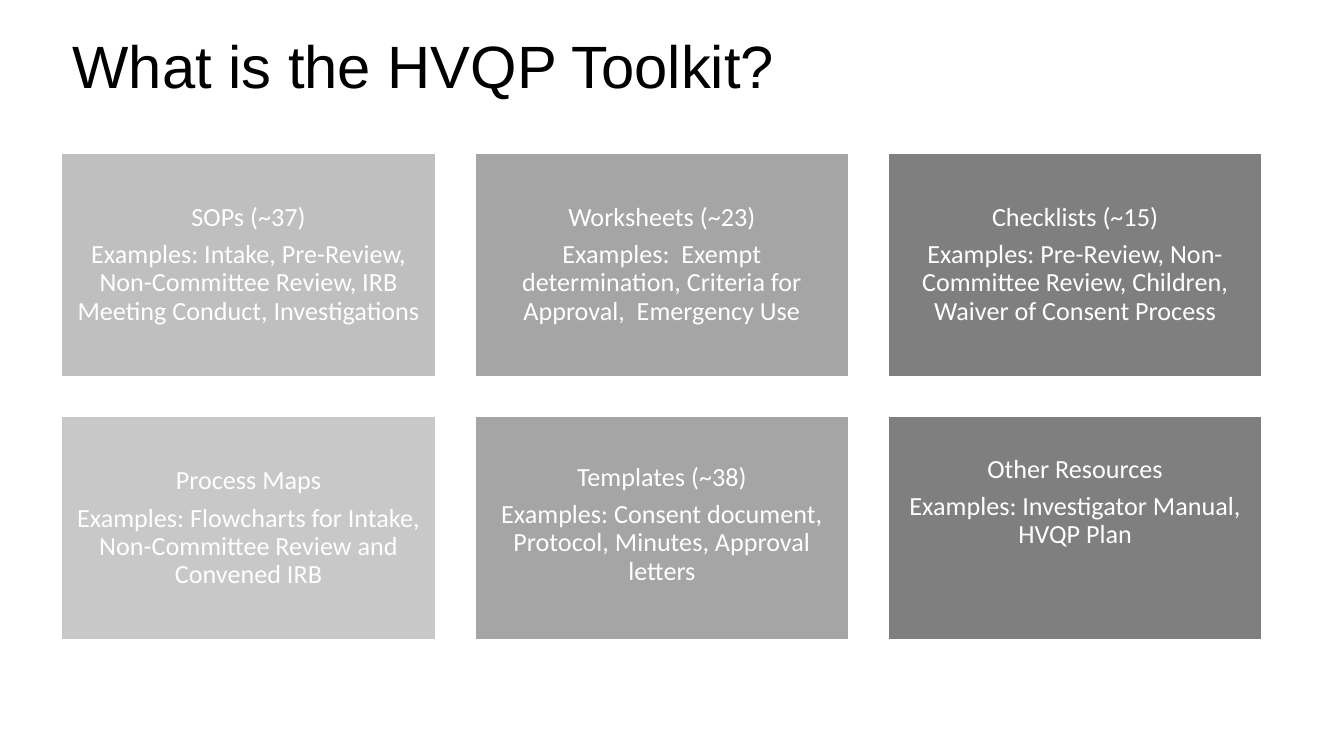
from dataclasses import dataclass

from lxml import etree
from pptx import Presentation
from pptx.dml.color import RGBColor
from pptx.enum.shapes import MSO_SHAPE
from pptx.enum.text import MSO_ANCHOR, MSO_AUTO_SIZE, PP_ALIGN
from pptx.oxml.ns import qn
from pptx.util import Emu, Pt

RECT = MSO_SHAPE.RECTANGLE
MIDDLE = MSO_ANCHOR.MIDDLE
TOP = MSO_ANCHOR.TOP
CENTER = PP_ALIGN.CENTER
LEFT = PP_ALIGN.LEFT
FIXED = MSO_AUTO_SIZE.NONE

SCALE = 4572
COLS = 3
GRID_X, GRID_Y = 90, 226
CARD_W, CARD_H = 560, 336
GAP_X, GAP_Y = 55, 56
PAD = 12


@dataclass(frozen=True)
class Theme:
    ink: str = "000000"
    paper: str = "FFFFFF"
    light: str = "BFBFBF"
    mid: str = "A5A5A5"
    dark: str = "7F7F7F"
    head_font: str = "Arial"
    card_font: str = "Calibri"
    head_size: int = 32
    card_size: int = 14


@dataclass(frozen=True)
class Card:
    name: str
    text: str
    fill: str
    alpha: int = 100
    inset: int = 0


THEME = Theme()

CARDS = [
    Card("SOPs (~37)",
         "Examples: Intake, Pre-Review, Non-Committee Review, "
         "IRB Meeting Conduct, Investigations", THEME.light),
    Card("Worksheets (~23)",
         "Examples:  Exempt determination, Criteria for Approval,  "
         "Emergency Use", THEME.mid),
    Card("Checklists (~15)",
         "Examples: Pre-Review, Non-Committee Review, Children, "
         "Waiver of Consent Process", THEME.dark),
    Card("Process Maps",
         "Examples: Flowcharts for Intake, Non-Committee Review "
         "and Convened IRB", THEME.light, alpha=85),
    Card("Templates (~38)",
         "Examples: Consent document, Protocol, Minutes, "
         "Approval letters", THEME.mid, inset=72),
    Card("Other Resources",
         "Examples: Investigator Manual, HVQP Plan", THEME.dark, inset=60),
]


def px(n):
    return Emu(n * SCALE)


def color(code):
    return RGBColor.from_string(code)


def style(para, font, size, code, align, space):
    para.alignment = align
    para.line_spacing = space
    for run in para.runs:
        run.font.name = font
        run.font.size = Pt(size)
        run.font.color.rgb = color(code)


def set_pad(frame, left, top, right, base):
    frame.margin_left, frame.margin_top = px(left), px(top)
    frame.margin_right, frame.margin_bottom = px(right), px(base)


def set_alpha(shape, value):
    fill = shape.fill._xPr.find(qn("a:solidFill"))
    etree.SubElement(fill[0], qn("a:alpha"), val=str(value * 1000))


def add_title(slide, text):
    title = slide.shapes.title
    title.left, title.top = px(0), px(-24)
    title.width, title.height = px(1800), px(188)
    frame = title.text_frame
    frame.text = text
    frame.word_wrap = True
    frame.auto_size = FIXED
    frame.vertical_anchor = MIDDLE
    set_pad(frame, 108, 10, 20, 10)
    style(frame.paragraphs[0], THEME.head_font, THEME.head_size,
          THEME.ink, LEFT, 1.5)


def add_card(slide, card, x, y):
    box = slide.shapes.add_shape(RECT, px(x), px(y), px(CARD_W), px(CARD_H))
    box.shadow.inherit = False
    box.fill.solid()
    box.fill.fore_color.rgb = color(card.fill)
    if card.alpha < 100:
        set_alpha(box, card.alpha)
    box.line.color.rgb = color(THEME.paper)
    box.line.width = Pt(2)
    frame = box.text_frame
    frame.text = f"{card.name}\n{card.text}"
    frame.word_wrap = True
    frame.vertical_anchor = TOP if card.inset else MIDDLE
    set_pad(frame, PAD, card.inset or PAD, PAD, PAD)
    for para in frame.paragraphs:
        style(para, THEME.card_font, THEME.card_size, THEME.paper, CENTER, 0.9)
    frame.paragraphs[1].space_before = Pt(4.9)


def main():
    deck = Presentation()
    deck.slide_width, deck.slide_height = px(2000), px(1125)
    slide = deck.slides.add_slide(deck.slide_layouts[5])
    add_title(slide, "What is the HVQP Toolkit?")
    for i, card in enumerate(CARDS):
        row, col = divmod(i, COLS)
        add_card(slide, card, GRID_X + col * (CARD_W + GAP_X),
                 GRID_Y + row * (CARD_H + GAP_Y))
    deck.save("out.pptx")


if __name__ == "__main__":
    main()
